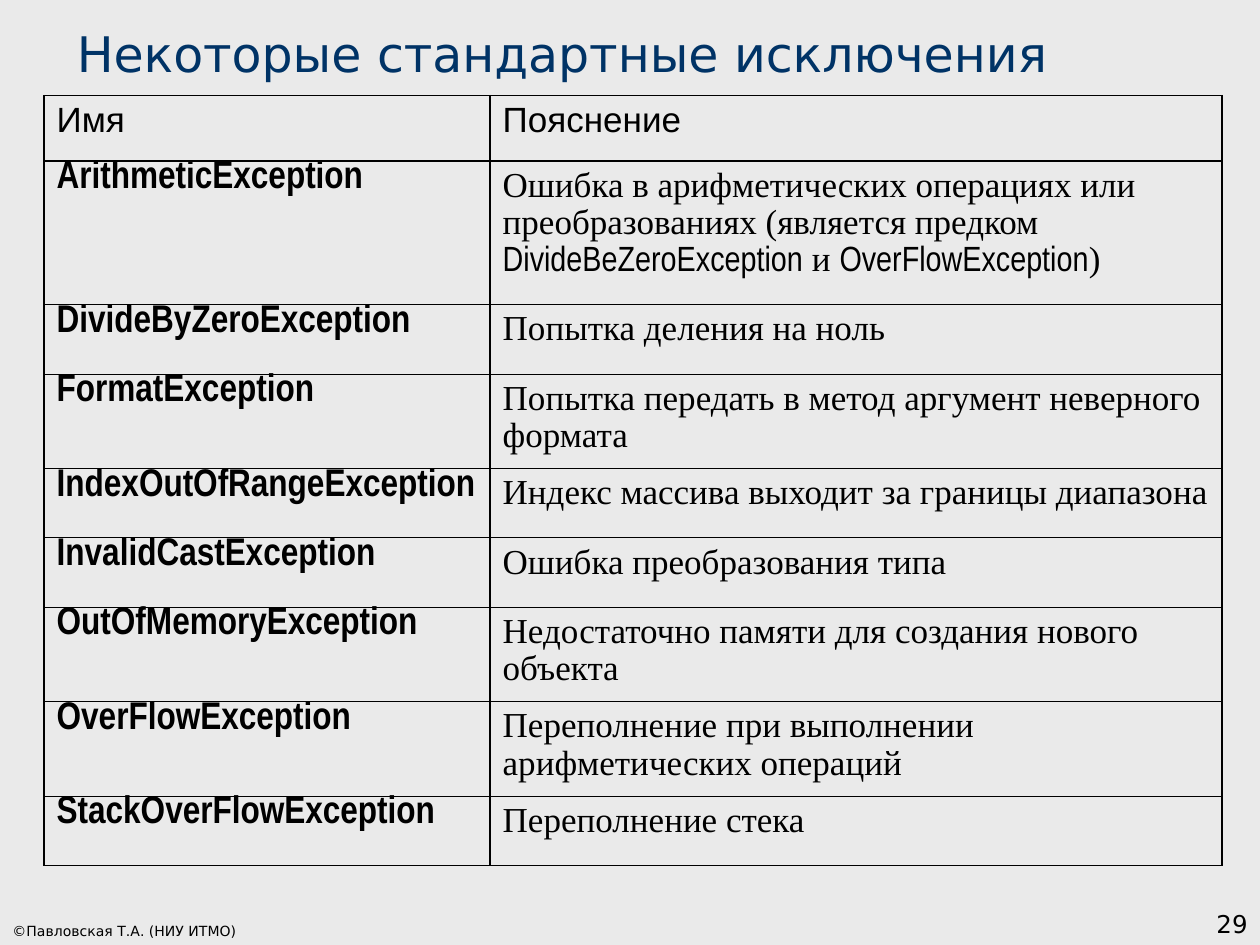
"""Build a slide with a table of standard exceptions."""
from dataclasses import dataclass
from typing import Any

from lxml import etree
from pptx import Presentation
from pptx import util as u
from pptx.dml.color import RGBColor
from pptx.enum import text as t
from pptx.oxml import ns

COLORS = {"background": "EAEAEA", "title": "003366", "text": "000000"}
SERIF = {"name": "Times New Roman", "size": u.Pt(20), "bold": False}
NARROW = {**SERIF, "name": "Arial Narrow"}
HEADER = {**SERIF, "name": "Arial"}
NAME = {"name": "Arial Narrow", "size": u.Pt(22), "bold": True}
TITLE = {"name": "DejaVu Sans", "size": u.Pt(28), "bold": False}
COLUMN_WIDTHS = (3.54, 5.81)
HANGING = u.Inches(0.38)


@dataclass
class Row:
    name: str
    explanation: list[str]
    height: float = 0.55


@dataclass
class Footer:
    text: str
    box: tuple[float, float, float, float]
    size: int
    alignment: t.PP_ALIGN


ROWS = [
    Row("Имя", ["Пояснение"], 0.52),
    Row("ArithmeticException",
        ["Ошибка в арифметических операциях или преобразованиях (является предком ",
         "DivideBeZeroException", " и ", "OverFlowException", ")"], 1.14),
    Row("DivideByZeroException", ["Попытка деления на ноль"]),
    Row("FormatException", ["Попытка передать в метод аргумент неверного формата"], 0.75),
    Row("IndexOutOfRangeException", ["Индекс массива выходит за границы диапазона"]),
    Row("InvalidCastException", ["Ошибка преобразования типа"]),
    Row("OutOfMemoryException", ["Недостаточно памяти для создания нового объекта"], 0.75),
    Row("OverFlowException", ["Переполнение при выполнении арифметических операций"], 0.75),
    Row("StackOverFlowException", ["Переполнение стека"]),
]
FOOTERS = [
    Footer("©Павловская Т.А. (НИУ ИТМО)", (0, 7.22, 3.11, 0.28), 8, t.PP_ALIGN.LEFT),
    Footer("29", (7.92, 7, 2.08, 0.5), 14, t.PP_ALIGN.RIGHT),
]


def set_values(target: Any, values: dict[str, Any]) -> None:
    """Set every attribute named in values."""
    for key, value in values.items():
        setattr(target, key, value)


def add_run(paragraph: Any, text: str, style: dict[str, Any], color: str = "text") -> None:
    """Append a formatted run."""
    run = paragraph.add_run()
    run.text = text
    set_values(run.font, style)
    run.font.color.rgb = RGBColor.from_string(COLORS[color])


def add_borders(cell: Any, widths: dict[str, float]) -> None:
    """Draw the cell borders, given side by side in points."""
    properties = cell._tc.get_or_add_tcPr()
    for side, width in widths.items():
        line = etree.SubElement(properties, ns.qn(f"a:ln{side}"), w=str(u.Pt(width)))
        fill = etree.SubElement(line, ns.qn("a:solidFill"))
        etree.SubElement(fill, ns.qn("a:srgbClr"), val=COLORS["text"])


def fill_cell(cell: Any, parts: list[str], styles: list[dict[str, Any]],
              top: float, borders: dict[str, float]) -> None:
    """Write the parts, using the styles in turn, with a hanging indent."""
    add_borders(cell, borders)
    cell.fill.background()
    set_values(cell, {"margin_left": u.Inches(0.1), "margin_right": u.Inches(0.1),
                      "margin_top": u.Inches(top), "margin_bottom": u.Inches(top),
                      "vertical_anchor": t.MSO_ANCHOR.TOP})
    paragraph = cell.text_frame.paragraphs[0]
    paragraph.line_spacing = 0.96
    set_values(paragraph._p.get_or_add_pPr(), {"marL": HANGING, "indent": -HANGING})
    for index, part in enumerate(parts):
        add_run(paragraph, part, styles[index % len(styles)])


def add_exceptions(slide: Any, rows: list[Row]) -> None:
    """Add the table of exceptions."""
    height = sum(row.height for row in rows)
    table = slide.shapes.add_table(
        len(rows), len(COLUMN_WIDTHS), u.Inches(0.35), u.Inches(0.76),
        u.Inches(sum(COLUMN_WIDTHS)), u.Inches(height)).table
    set_values(table, {"first_row": False, "horz_banding": False})
    for column, width in zip(table.columns, COLUMN_WIDTHS):
        column.width = u.Inches(width)
    last = len(rows) - 1
    for index, row in enumerate(rows):
        table.rows[index].height = u.Inches(row.height)
        borders = {"L": 1, "R": 1, "T": 1 if index < 2 else 0.75,
                   "B": 1 if index in (0, last) else 0.75}
        header = index == 0
        fill_cell(table.cell(index, 0), [row.name], [HEADER if header else NAME],
                  0.05 if header else 0, borders)
        fill_cell(table.cell(index, 1), row.explanation,
                  [HEADER] if header else [SERIF, NARROW], 0.05, borders)


def add_footer(slide: Any, footer: Footer) -> None:
    """Add one line of text at the foot of the slide."""
    frame = slide.shapes.add_textbox(*map(u.Inches, footer.box)).text_frame
    set_values(frame, {"word_wrap": True, "vertical_anchor": t.MSO_ANCHOR.BOTTOM})
    paragraph = frame.paragraphs[0]
    paragraph.alignment = footer.alignment
    add_run(paragraph, footer.text, {**TITLE, "size": u.Pt(footer.size)})


def set_title(slide: Any, text: str) -> None:
    """Place and format the title."""
    title = slide.shapes.title
    set_values(title, {"left": u.Inches(0.51), "top": u.Inches(0.13),
                       "width": u.Inches(9.37), "height": u.Inches(0.57)})
    set_values(title.text_frame, {"word_wrap": True,
                                  "vertical_anchor": t.MSO_ANCHOR.BOTTOM,
                                  "auto_size": t.MSO_AUTO_SIZE.SHAPE_TO_FIT_TEXT})
    paragraph = title.text_frame.paragraphs[0]
    paragraph.alignment = t.PP_ALIGN.LEFT
    add_run(paragraph, text, TITLE, "title")


def main() -> None:
    """Build and save the presentation."""
    presentation = Presentation()
    set_values(presentation, {"slide_width": u.Inches(10), "slide_height": u.Inches(7.5)})
    slide = presentation.slides.add_slide(presentation.slide_layouts[5])
    slide.background.fill.solid()
    slide.background.fill.fore_color.rgb = RGBColor.from_string(COLORS["background"])
    for footer in FOOTERS:
        add_footer(slide, footer)
    set_title(slide, "Некоторые стандартные исключения")
    add_exceptions(slide, ROWS)
    presentation.save("out.pptx")


if __name__ == "__main__":
    main()
